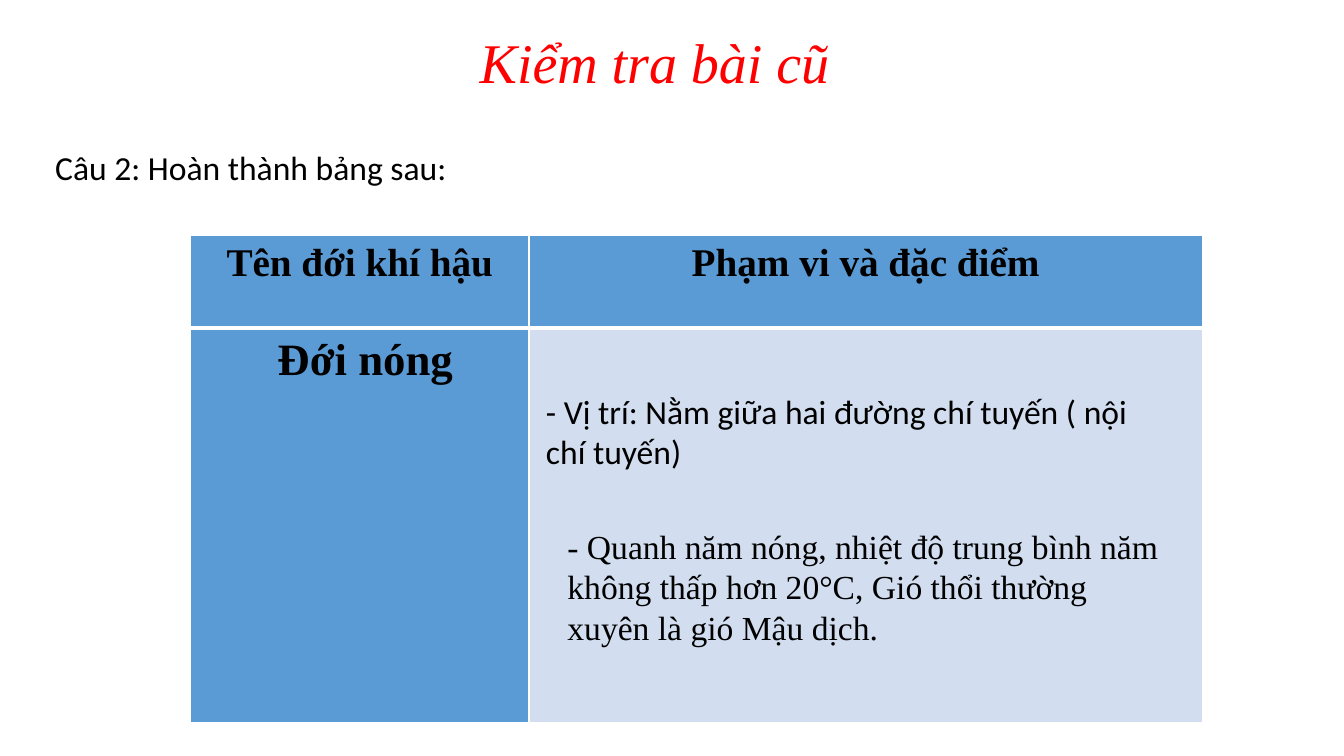
from dataclasses import dataclass

from lxml import etree
from pptx import Presentation
from pptx.dml.color import RGBColor
from pptx.enum.text import MSO_ANCHOR, MSO_AUTO_SIZE, PP_ALIGN
from pptx.oxml.ns import qn
from pptx.util import Cm, Pt

CENTER, LEFT = PP_ALIGN.CENTER, PP_ALIGN.LEFT
TOP = MSO_ANCHOR.TOP
FIXED_SIZE = MSO_AUTO_SIZE.NONE


@dataclass(frozen=True)
class Theme:
    serif: str = "Times New Roman"
    sans: str = "Calibri"
    red: str = "FF0000"
    black: str = "000000"
    white: str = "FFFFFF"
    blue: str = "5B9BD5"
    pale_blue: str = "D2DEEF"
    title_size: int = 40
    zone_size: int = 32
    header_size: int = 28
    body_size: int = 24
    thin_line: int = 1
    thick_line: int = 3


THEME = Theme()

# Content: lengths in cm, boxes as left, top, width, height
TITLE = ("Kiểm tra bài cũ", (9.88, 0.56, 13.23, 1.96))
QUESTION = ("Câu 2: Hoàn thành bảng sau:", THEME.sans, (1.14, 3.58, 32.72, 1.27))
ANSWERS = [
    ("- Quanh năm nóng, nhiệt độ trung bình năm không thấp hơn 20°C, "
     "Gió thổi thường xuyên là gió Mậu dịch.", THEME.serif, (14.05, 13.13, 15.49, 3.33)),
    ("- Vị trí: Nằm giữa hai đường chí tuyến ( nội chí tuyến)",
     THEME.sans, (13.51, 9.73, 16.03, 2.31)),
]
CLIMATE_ROWS = [
    [("Tên đới khí hậu", THEME.header_size, THEME.blue),
     ("Phạm vi và đặc điểm", THEME.header_size, THEME.blue)],
    [(" Đới nóng", THEME.zone_size, THEME.blue),
     ("", THEME.body_size, THEME.pale_blue)],
]
TABLE_LEFT, TABLE_TOP = 4.8, 5.92
COLUMN_WIDTHS = [8.53, 16.97]
ROW_HEIGHTS = [2.34, 9.96]
CELL_MARGIN = 0.18


def style(para, font_name, size, color, align=LEFT, bold=False, italic=False):
    para.alignment = align
    font = para.font
    font.name, font.size = font_name, Pt(size)
    font.bold, font.italic = bold, italic
    font.color.rgb = RGBColor.from_string(color)


def add_text(page, text, font_name, place):
    frame = page.shapes.add_textbox(*map(Cm, place)).text_frame
    frame.word_wrap = True
    frame.text = text
    style(frame.paragraphs[0], font_name, THEME.body_size, THEME.black)


def set_borders(cell, widths):
    """Put border lines before the fill, as the cell schema asks."""
    properties = cell._tc.get_or_add_tcPr()
    for index, (side, width) in enumerate(widths.items()):
        line = etree.Element(qn(f"a:{side}"), w=str(Pt(width)))
        fill = etree.SubElement(line, qn("a:solidFill"))
        etree.SubElement(fill, qn("a:srgbClr"), val=THEME.white)
        properties.insert(index, line)


def add_title(page):
    text, place = TITLE
    title = page.shapes.title
    title.left, title.top, title.width, title.height = map(Cm, place)
    frame = title.text_frame
    frame.text = text
    frame.vertical_anchor = TOP
    frame.auto_size = FIXED_SIZE
    style(frame.paragraphs[0], THEME.serif, THEME.title_size, THEME.red, CENTER, italic=True)


def add_climate_table(page):
    place = (TABLE_LEFT, TABLE_TOP, sum(COLUMN_WIDTHS), sum(ROW_HEIGHTS))
    table = page.shapes.add_table(
        len(ROW_HEIGHTS), len(COLUMN_WIDTHS), *map(Cm, place)).table
    table.horz_banding = False
    for column, width in zip(table.columns, COLUMN_WIDTHS):
        column.width = Cm(width)
    for row, height in zip(table.rows, ROW_HEIGHTS):
        row.height = Cm(height)

    for r, row in enumerate(CLIMATE_ROWS):
        # The line under the header is the only thick one
        widths = dict.fromkeys(("lnL", "lnR", "lnT", "lnB"), THEME.thin_line)
        widths["lnB" if r == 0 else "lnT"] = THEME.thick_line
        for c, (text, size, color) in enumerate(row):
            cell = table.cell(r, c)
            cell.margin_left = cell.margin_right = Cm(CELL_MARGIN)
            cell.margin_top = cell.margin_bottom = 0
            cell.fill.solid()
            cell.fill.fore_color.rgb = RGBColor.from_string(color)
            set_borders(cell, widths)
            cell.text = text
            para = cell.text_frame.paragraphs[0]
            para.line_spacing = 1.15
            style(para, THEME.serif, size, THEME.black, CENTER, bold=True)


def main():
    deck = Presentation()
    deck.slide_width, deck.slide_height = Cm(33.87), Cm(19.05)
    title_only = deck.slide_layouts[5]
    page = deck.slides.add_slide(title_only)

    # Heading and question
    add_title(page)
    add_text(page, *QUESTION)

    # Table with the answers laid over its empty cell
    add_climate_table(page)
    for answer in ANSWERS:
        add_text(page, *answer)

    deck.save("out.pptx")


if __name__ == "__main__":
    main()
